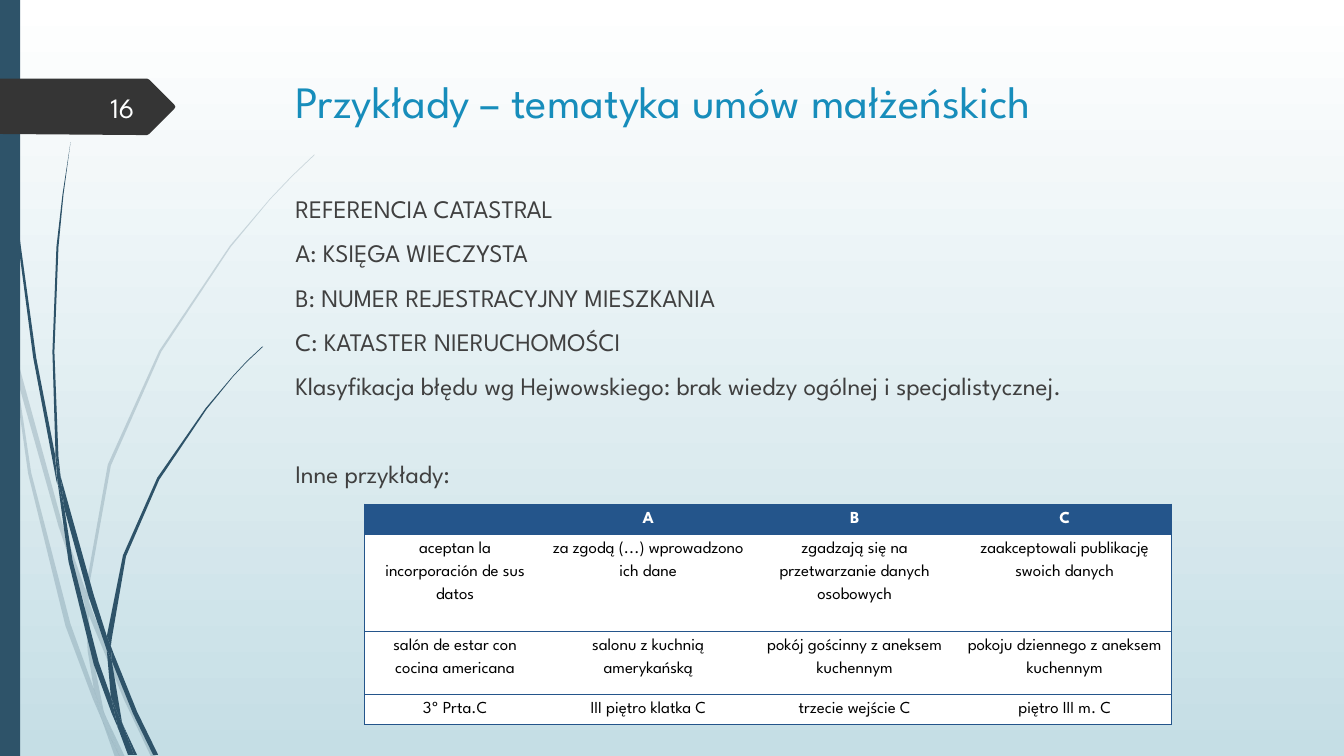
from dataclasses import dataclass

from lxml.etree import SubElement
from pptx import Presentation
from pptx.dml.color import RGBColor
from pptx.enum.shapes import MSO_SHAPE as Preset
from pptx.enum.text import MSO_ANCHOR as Anchor, PP_ALIGN as Align
from pptx.oxml.ns import qn
from pptx.util import Pt


@dataclass(frozen=True)
class Theme:
    font: str = "League Spartan"
    sky_top: str = "FFFFFF"
    sky_bottom: str = "C5DEE5"
    stem: str = "2E5369"
    tag: str = "353535"
    title: str = "178DBB"
    body: str = "404040"
    number: str = "FEFFFF"
    grid: str = "24558B"
    white: str = "FFFFFF"
    black: str = "000000"
    title_size: int = 32
    body_size: int = 18
    number_size: int = 20
    table_size: int = 12


THEME = Theme()
UNIT = Pt(0.72)  # outline coordinates count in steps of 0.72 pt

# Outlines of the grass stems, from back to front
PALE_STEMS = [
    [(11, 350), (9, 322), (0, 282), (0, 299), (10, 344)],
    [(58, 522), (84, 599), (85, 586), (62, 520), (14, 345), (17, 376)],
    [(92, 607), (88, 596), (88, 610), (123, 694), (150, 751), (155, 751), (127, 692)],
    [(119, 751), (124, 751), (105, 711)],
    [(93, 683), (70, 619), (31, 469), (17, 376), (11, 350), (28, 470), (65, 621),
     (92, 693), (101, 714), (99, 707)],
    [(84, 599), (87, 646), (93, 683), (96, 692), (105, 711), (103, 706), (91, 646),
     (88, 610), (88, 608)],
    [(88, 584), (110, 462), (160, 349), (229, 245), (268, 198), (290, 175), (312, 154),
     (312, 153), (289, 175), (268, 197), (228, 244), (158, 348), (107, 461), (85, 584),
     (85, 586), (88, 596)],
    [(101, 714), (114, 751), (119, 751)],
    [(88, 608), (88, 610), (88, 596), (85, 586), (84, 599)],
    [(96, 692), (93, 683), (99, 707), (101, 714), (119, 751), (105, 711)],
]
DARK_STEMS = [
    [(7, 110), (17, 233), (33, 355), (56, 477), (57, 481), (55, 457), (55, 453),
     (36, 355), (19, 232), (8, 109), (5, 48), (4, 0), (3, 0), (4, 48)],
    [(88, 592), (106, 645), (106, 633), (106, 631), (93, 590), (60, 472), (64, 505)],
    [(113, 649), (110, 641), (111, 656), (132, 708), (152, 749), (157, 749), (136, 706)],
    [(110, 691), (98, 657), (72, 556), (64, 505), (57, 477), (68, 557), (93, 659),
     (111, 708), (117, 722), (116, 717)],
    [(60, 472), (58, 453), (54, 349), (58, 245), (63, 193), (70, 141), (62, 193),
     (56, 245), (52, 349), (55, 449)],
    [(133, 749), (136, 749), (122, 719)],
    [(57, 477), (64, 505), (60, 472), (55, 449), (55, 453)],
    [(111, 633), (125, 552), (158, 476), (205, 406), (231, 374), (245, 359), (261, 344),
     (260, 344), (245, 358), (231, 373), (204, 405), (156, 474), (122, 551), (106, 631),
     (110, 641)],
    [(117, 722), (127, 749), (131, 749)],
    [(106, 645), (110, 691), (116, 706), (122, 719), (121, 716), (111, 656), (109, 651)],
    [(106, 645), (109, 651), (111, 656), (110, 641), (106, 631), (106, 633)],
    [(116, 706), (110, 691), (116, 717), (117, 722), (130, 749), (133, 749), (122, 719)],
]
NUMBER_TAG = [(173, 108), (148, 133), (146, 134), (136, 134), (0, 133), (0, 78),
              (146, 78), (148, 79), (173, 104), (174, 106)]

TITLE = "Przykłady – tematyka umów małżeńskich"
BODY = [
    "REFERENCIA CATASTRAL",
    "A: KSIĘGA WIECZYSTA",
    "B: NUMER REJESTRACYJNY MIESZKANIA",
    "C: KATASTER NIERUCHOMOŚCI",
    "Klasyfikacja błędu wg Hejwowskiego: brak wiedzy ogólnej i specjalistycznej.",
    "Inne przykłady:",
]
EXAMPLES = [
    ["", "A", "B", "C"],
    ["aceptan la incorporación de sus datos", "za zgodą (...) wprowadzono ich dane",
     "zgadzają się na przetwarzanie danych osobowych",
     "zaakceptowali publikację swoich danych"],
    ["salón de estar con cocina americana", "salonu z kuchnią amerykańską",
     "pokój gościnny z aneksem kuchennym", "pokoju dziennego z aneksem kuchennym"],
    ["3º Prta.C", "III piętro klatka C", "trzecie wejście C", "piętro III m. C"],
]
COLUMN_WIDTHS = [129, 147, 148, 152]
ROW_HEIGHTS = [20.9, 69.1, 45.2, 20.9]


def rgb(color):
    return RGBColor.from_string(color)


def paint(shape, color, alpha=100):
    shape.shadow.inherit = False
    shape.line.fill.background()
    shape.fill.solid()
    shape.fill.fore_color.rgb = rgb(color)
    if alpha < 100:
        tint = shape.fill._xPr.find(qn("a:solidFill"))[0]
        SubElement(tint, qn("a:alpha"), val=str(alpha * 1000))


def add_outline(slide, points, color, alpha=100):
    builder = slide.shapes.build_freeform(*points[0], scale=UNIT)
    builder.add_line_segments(points[1:], close=True)
    paint(builder.convert_to_shape(), color, alpha)


def style(paragraph, size, color, align=Align.LEFT, bold=False):
    paragraph.alignment = align
    font = paragraph.font
    font.name, font.size, font.bold = THEME.font, Pt(size), bold
    font.color.rgb = rgb(color)


def add_text(slide, box, lines, size, color, align=Align.LEFT, anchor=Anchor.TOP):
    frame = slide.shapes.add_textbox(*map(Pt, box)).text_frame
    frame.word_wrap = True
    frame.vertical_anchor = anchor
    frame.text = "\n".join(lines)
    for paragraph in frame.paragraphs:
        style(paragraph, size, color, align)
    return frame.paragraphs


def set_borders(cell, visible):
    """Draw the sides named in visible (of L, R, T, B) and clear the others."""
    properties = cell._tc.get_or_add_tcPr()
    for side in "LRTB":
        line = SubElement(properties, qn(f"a:ln{side}"), w=str(Pt(0.75)))
        if side in visible:
            fill = SubElement(line, qn("a:solidFill"))
            SubElement(fill, qn("a:srgbClr"), val=THEME.grid)
        else:
            SubElement(line, qn("a:noFill"))


def fill_cell(cell, text, header, borders):
    set_borders(cell, borders)
    cell.fill.solid()
    cell.fill.fore_color.rgb = rgb(THEME.grid if header else THEME.white)
    cell.margin_left = cell.margin_right = Pt(5)
    cell.margin_top = cell.margin_bottom = Pt(0)
    cell.text = text
    paragraph = cell.text_frame.paragraphs[0]
    style(paragraph, THEME.table_size, THEME.white if header else THEME.black,
          Align.CENTER, header)
    paragraph.line_spacing = 1.5


def add_examples(slide, left, top):
    size = map(Pt, (left, top, sum(COLUMN_WIDTHS), sum(ROW_HEIGHTS)))
    table = slide.shapes.add_table(len(EXAMPLES), len(COLUMN_WIDTHS), *size).table
    table.first_row = table.horz_banding = False
    for column, width in zip(table.columns, COLUMN_WIDTHS):
        column.width = Pt(width)
    last = len(COLUMN_WIDTHS) - 1
    for r, (texts, height) in enumerate(zip(EXAMPLES, ROW_HEIGHTS)):
        table.rows[r].height = Pt(height)
        for c, text in enumerate(texts):
            borders = "TB" + {0: "L", last: "R"}.get(c, "")
            fill_cell(table.cell(r, c), text, r == 0, borders)


def add_background(slide):
    fill = slide.background.fill
    fill.gradient()
    fill.gradient_angle = 270
    for stop, color in zip(fill.gradient_stops, (THEME.sky_top, THEME.sky_bottom)):
        stop.color.rgb = rgb(color)


def main():
    deck = Presentation()
    deck.slide_width, deck.slide_height = Pt(960), Pt(540)
    slide = deck.slides.add_slide(deck.slide_layouts[6])

    # Backdrop: gradient, stems, side bar and number tag
    add_background(slide)
    for stem in PALE_STEMS:
        add_outline(slide, stem, THEME.stem, alpha=20)
    for stem in DARK_STEMS:
        add_outline(slide, stem, THEME.stem)
    side_bar = slide.shapes.add_shape(Preset.RECTANGLE, 0, 0, Pt(14.4), Pt(540))
    paint(side_bar, THEME.stem)
    add_outline(slide, NUMBER_TAG, THEME.tag)

    # Title, body and slide number
    add_text(slide, (204, 49, 702, 101), [TITLE], THEME.title_size, THEME.title)
    body = add_text(slide, (203.8, 134.6, 702, 330.5), BODY, THEME.body_size, THEME.body)
    for paragraph in body:
        paragraph.space_before = Pt(10)
    body[-1].space_before = Pt(41.4)
    add_text(slide, (41.8, 61.9, 61.2, 28.8), ["16"], THEME.number_size, THEME.number,
             Align.RIGHT, Anchor.MIDDLE)

    # Table of further examples
    add_examples(slide, 260.6, 360)

    deck.save("out.pptx")


if __name__ == "__main__":
    main()
